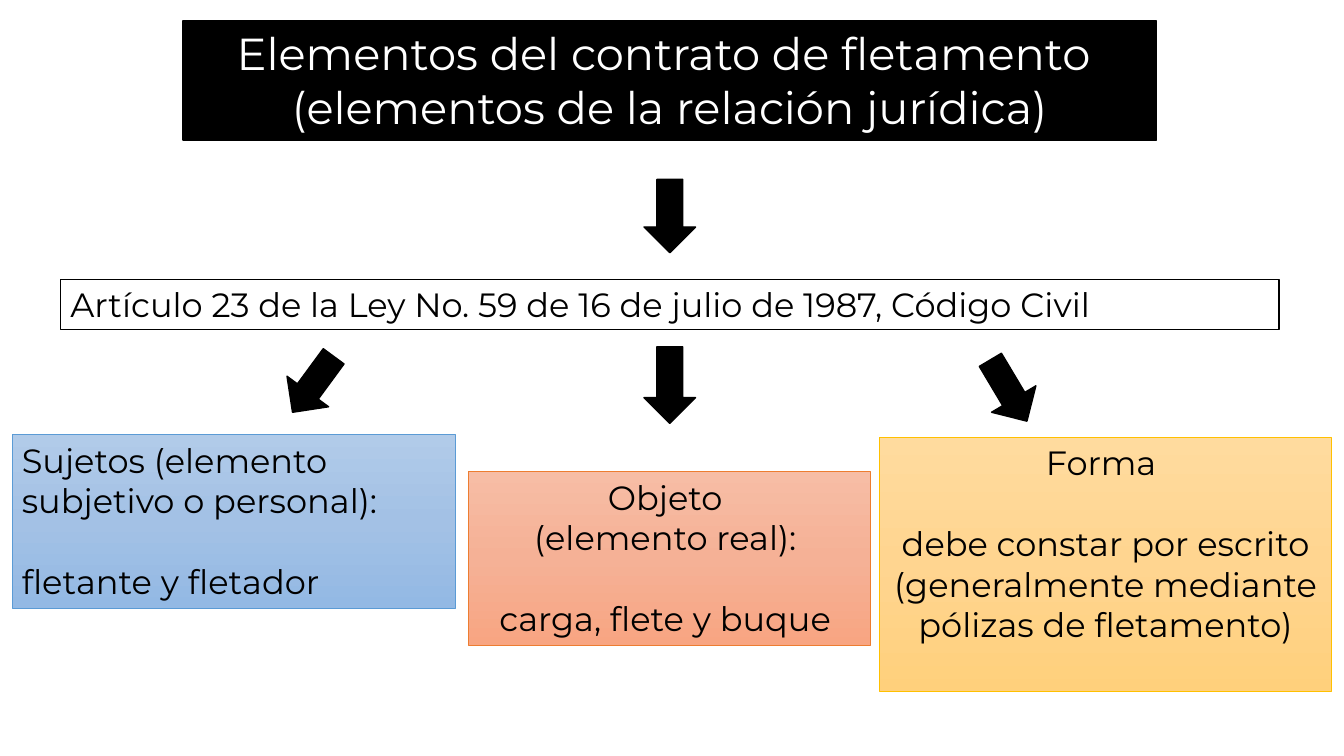
from copy import deepcopy
from dataclasses import dataclass

from pptx import Presentation
from pptx import util as u
from pptx.dml.color import RGBColor
from pptx.enum import shapes, text
from pptx.oxml.ns import qn


@dataclass(frozen=True)
class Theme:
    font: str = "Montserrat"
    title_size: int = 32
    body_size: int = 24
    blank_line: int = 29
    black: str = "000000"
    white: str = "FFFFFF"
    blue: tuple = ("B1CBE9", "A3C1E5", "93B9E4")
    blue_edge: str = "5B9BD5"
    orange: tuple = ("F7BDA5", "F5B196", "F8A582")
    orange_edge: str = "ED7D31"
    gold: tuple = ("FFDB9E", "FFD590", "FFD07C")
    gold_edge: str = "FFC000"


THEME = Theme()
LEFT, CENTER = text.PP_ALIGN.LEFT, text.PP_ALIGN.CENTER

# Content: lengths in cm
AXIS = 16.88
TITLE = ["Elementos del contrato de fletamento ", "(elementos de la relación jurídica)"]
ARTICLE = ["Artículo 23 de la Ley No. 59 de 16 de julio de 1987, Código Civil"]

# Heading lines, detail, (left, top, width, height), gradient, edge, alignment, wrap
ELEMENTS = [
    (["Sujetos (elemento subjetivo o personal):"], "fletante y fletador",
     (0.3, 10.95, 11.18, 4.37), THEME.blue, THEME.blue_edge, LEFT, True),
    (["Objeto ", "(elemento real): "], "carga, flete y buque ",
     (11.81, 11.89, 10.13, 4.37), THEME.orange, THEME.orange_edge, CENTER, False),
    (["Forma "], "debe constar por escrito (generalmente mediante pólizas de fletamento)",
     (22.17, 11.02, 11.38, 6.4), THEME.gold, THEME.gold_edge, CENTER, True),
]

# Centre, top, height, rotation
ARROW_WIDTH = 1.3
ARROWS = [
    (AXIS, 4.52, 1.85, 0),
    (7.89, 8.81, 1.75, 36.3),
    (AXIS, 8.74, 1.93, 0),
    (25.42, 8.94, 1.8, 329.2),
]


def rgb(code):
    return RGBColor.from_string(code)


def paint(shape, fill, edge, weight=1):
    """Fill with one colour, or top to bottom with a tuple of colours."""
    if isinstance(fill, tuple):
        shape.fill.gradient()
        shape.fill.gradient_angle = 270
        stops = shape._element.spPr.find(qn("a:gradFill")).find(qn("a:gsLst"))
        stops.insert(1, deepcopy(stops[0]))
        for i, (stop, color) in enumerate(zip(shape.fill.gradient_stops, fill)):
            stop.position = i / (len(fill) - 1)
            stop.color.rgb = rgb(color)
    else:
        shape.fill.solid()
        shape.fill.fore_color.rgb = rgb(fill)
    shape.line.color.rgb = rgb(edge)
    shape.line.width = u.Pt(weight)


def write(shape, lines, size=THEME.body_size, color=THEME.black, align=LEFT,
          wrap=True, gap_before=None):
    frame = shape.text_frame
    frame.word_wrap = wrap
    frame.auto_size = text.MSO_AUTO_SIZE.NONE
    frame.vertical_anchor = text.MSO_ANCHOR.TOP
    for i, line in enumerate(lines):
        paragraph = frame.add_paragraph() if i else frame.paragraphs[0]
        paragraph.alignment = align
        paragraph.line_spacing = 1.0
        paragraph.space_before = u.Pt(THEME.blank_line if i and i == gap_before else 0)
        run = paragraph.add_run()
        run.text = line
        run.font.name = THEME.font
        run.font.size = u.Pt(size)
        run.font.color.rgb = rgb(color)


def add_block(slide, kind, box):
    block = slide.shapes.add_shape(kind, *map(u.Cm, box))
    block.shadow.inherit = False
    return block


def main():
    deck = Presentation()
    deck.slide_width, deck.slide_height = u.Cm(33.87), u.Cm(19.05)
    slide = deck.slides.add_slide(deck.slide_layouts[5])

    # Title
    title = slide.shapes.title
    title_width = 24.54
    title.left, title.top = u.Cm(AXIS - title_width / 2), u.Cm(0.53)
    title.width, title.height = u.Cm(title_width), u.Cm(3)
    paint(title, THEME.black, THEME.black)
    write(title, TITLE, size=THEME.title_size, color=THEME.white, align=CENTER, wrap=False)

    # Legal article
    article_width = 30.71
    article = add_block(slide, shapes.MSO_SHAPE.RECTANGLE,
                        (AXIS - article_width / 2, 7.04, article_width, 1.27))
    paint(article, THEME.white, THEME.black)
    write(article, ARTICLE)

    # Arrows
    for center, top, height, rotation in ARROWS:
        arrow = add_block(slide, shapes.MSO_SHAPE.DOWN_ARROW,
                          (center - ARROW_WIDTH / 2, top, ARROW_WIDTH, height))
        arrow.rotation = rotation
        paint(arrow, THEME.black, THEME.black)

    # The three elements
    for heading, detail, box, gradient, edge, align, wrap in ELEMENTS:
        element = add_block(slide, shapes.MSO_SHAPE.RECTANGLE, box)
        paint(element, gradient, edge, weight=0.5)
        write(element, heading + [detail], align=align, wrap=wrap, gap_before=len(heading))

    deck.save("out.pptx")


if __name__ == "__main__":
    main()
